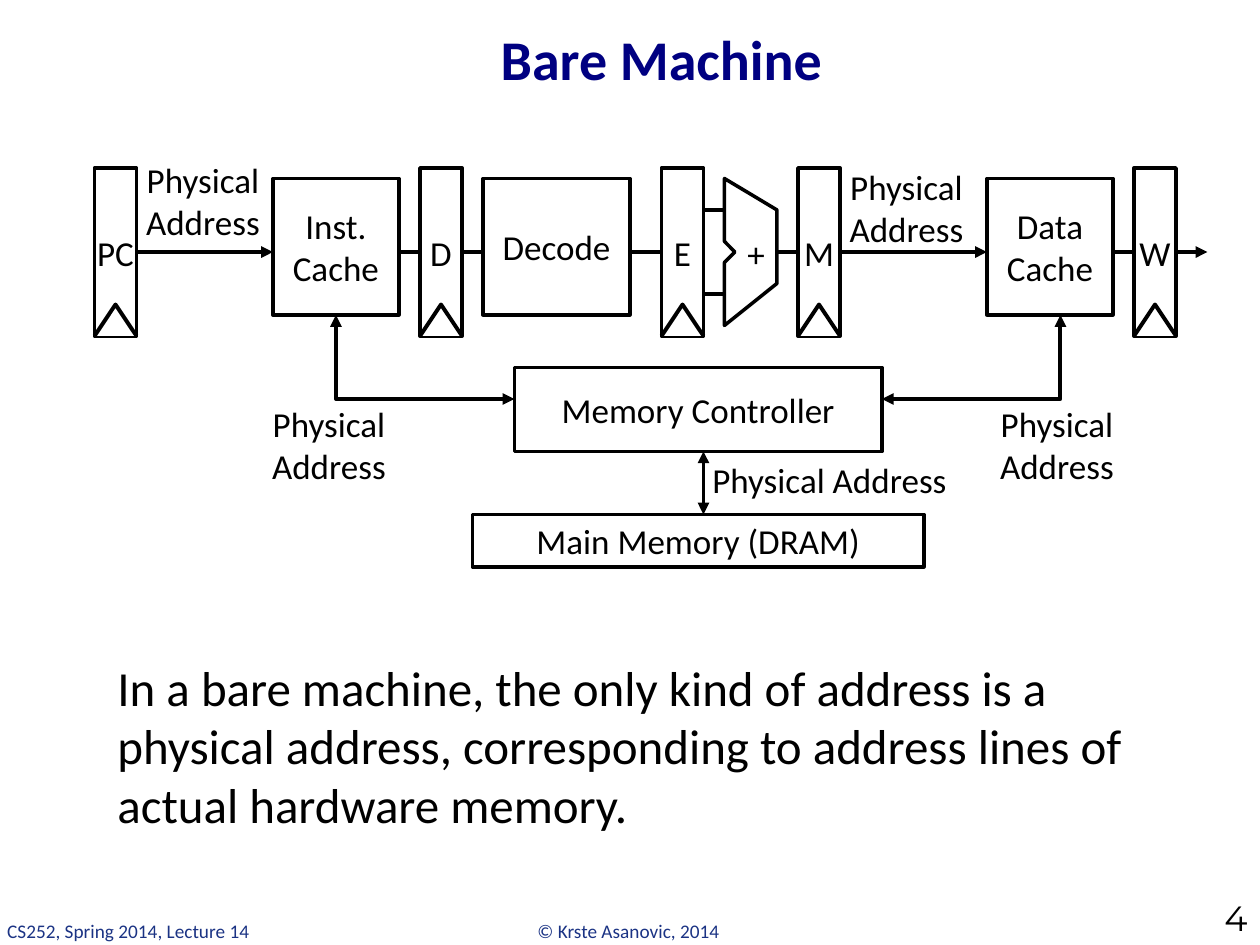
from dataclasses import dataclass
from pptx import Presentation
from pptx.dml.color import RGBColor
from pptx.enum.shapes import MSO_CONNECTOR, MSO_SHAPE
from pptx.enum.text import MSO_ANCHOR, PP_ALIGN
from pptx.oxml.ns import qn
from pptx.util import Pt
from lxml.etree import SubElement


@dataclass(frozen=True)
class Theme:
    ink: RGBColor = RGBColor(0, 0, 0)
    paper: RGBColor = RGBColor(255, 255, 255)
    navy: RGBColor = RGBColor(0x00, 0x00, 0x81)
    blue: RGBColor = RGBColor(0x1B, 0x33, 0x84)
    font: str = "Calibri"
    digit: str = "Montserrat"
    head: int = 32
    body: int = 28
    label: int = 20
    foot: int = 11
    thin: float = 2
    bold: float = 2.25


THEME = Theme()
ADDRESS = "Physical Address"
REG_W, REG_H, BUS = 24, 96, 48


def write(shape, text, size=THEME.label, color=THEME.ink, font=THEME.font,
          align=PP_ALIGN.CENTER, anchor=MSO_ANCHOR.MIDDLE, wrap=True, bold=False):
    frame = shape.text_frame
    frame.word_wrap = wrap
    frame.vertical_anchor = anchor
    line = frame.paragraphs[0]
    line.text = text
    line.alignment = align
    line.font.size = Pt(size)
    line.font.name = font
    line.font.bold = bold
    line.font.color.rgb = color


def add_text(slide, box, text, **style):
    write(slide.shapes.add_textbox(*map(Pt, box)), text, **style)


def ink(shape, width, fill=True):
    shape.shadow.inherit = False
    shape.line.color.rgb = THEME.ink
    shape.line.width = Pt(width)
    if fill:
        shape.fill.solid()
        shape.fill.fore_color.rgb = THEME.paper
    else:
        shape.fill.background()


def add_block(slide, box, text, width=THEME.thin, wrap=True):
    block = slide.shapes.add_shape(MSO_SHAPE.RECTANGLE, *map(Pt, box))
    ink(block, width)
    write(block, text, wrap=wrap)
    return block


def add_path(slide, points, width, close=False, fill=True):
    spots = [(Pt(x), Pt(y)) for x, y in points]
    maker = slide.shapes.build_freeform(*spots[0], scale=1.0)
    maker.add_line_segments(spots[1:], close=close)
    path = maker.convert_to_shape()
    ink(path, width, fill)
    return path


def add_tips(shape, *ends):
    line = shape.line._get_or_add_ln()
    for end in ends:
        SubElement(line, qn(f"a:{end}"), type="triangle")


def add_wire(slide, start, stop, *ends):
    wire = slide.shapes.add_connector(
        MSO_CONNECTOR.STRAIGHT, *map(Pt, (*start, *stop)))
    wire.line.color.rgb = THEME.ink
    wire.line.width = Pt(THEME.bold)
    add_tips(wire, *ends)
    SubElement(wire._element.spPr, qn("a:effectLst"))
    return wire


def add_latch(slide, left, top, name):
    latch = add_block(slide, (left, top, REG_W, REG_H), name, THEME.bold, False)
    base = top + REG_H
    add_path(slide, [(left, base), (left + REG_W / 2, base - 18),
                     (left + REG_W, base)], THEME.bold)
    return latch


def add_adder(slide, left, top):
    edge = [(0, 0), (0, 36), (6, 42), (0, 48), (0, 84), (30, 60), (30, 18)]
    add_path(slide, [(left + x, top + y) for x, y in edge], THEME.thin, close=True)
    add_text(slide, (left + 6, top + 27, 24, 32), "+", wrap=False)


def add_pipe(slide, left, top):
    mid = top + BUS
    first = add_latch(slide, left, top, "PC")
    stage = add_latch(slide, left + 324, top, "E")
    fetch = add_wire(slide, (left + REG_W, mid), (left + 102, mid), "tailEnd")
    fetch.begin_connect(first, 3)
    issue = add_wire(slide, (left + 174, mid), (left + 324, mid))
    issue.end_connect(stage, 1)
    for start, stop in ((390, 510), (582, 636)):
        add_wire(slide, (left + start, mid), (left + stop, mid), "tailEnd")
    for y in (24, 72):
        add_wire(slide, (left + 348, top + y), (left + 360, top + y))
    for x, name in ((186, "D"), (402, "M"), (594, "W")):
        add_latch(slide, left + x, top, name)
    for x, width, name in ((102, 72, "Inst. Cache"), (222, 84, "Decode"),
                           (510, 72, "Data Cache")):
        add_block(slide, (left + x, top + 6, width, 78), name)
    add_adder(slide, left + 360, top + 6)
    for x, y in ((18, -9), (420, -5)):
        add_text(slide, (left + x, top + y, 88, 55.5), ADDRESS)


def add_memory(slide, left, top):
    add_block(slide, (left + 126, top + 114, 258, 30), "Main Memory (DRAM)")
    add_block(slide, (left + 150, top + 30, 210, 48), "Memory Controller")
    for outer, inner in ((48, 150), (462, 360)):
        elbow = add_path(slide, [(left + outer, top), (left + outer, top + 48),
                                 (left + inner, top + 48)], THEME.bold, fill=False)
        add_tips(elbow, "headEnd", "tailEnd")
    add_wire(slide, (left + 258, top + 78), (left + 258, top + 114),
             "headEnd", "tailEnd")
    for x, y, width, height in ((0, 46, 88, 55.5), (416, 46, 88, 55.5),
                                (234, 78, 192, 32)):
        add_text(slide, (left + x, top + y, width, height), ADDRESS)


def add_title(slide, box):
    add_text(slide, box, "Bare Machine", size=THEME.head, color=THEME.navy, bold=True)


def add_note(slide, box):
    add_text(slide, box, "In a bare machine, the only kind of address is a physical "
             "address, corresponding to address lines of actual hardware memory.",
             size=THEME.body, align=PP_ALIGN.LEFT, anchor=MSO_ANCHOR.TOP)


def add_footer(slide, left, top):
    for x, width, text in ((-3, 154, "CS252, Spring 2014, Lecture 14"),
                           (300, 120, "© Krste Asanovic, 2014")):
        add_text(slide, (left + x, top + 1, width, 21), text, size=THEME.foot,
                 color=THEME.blue, align=PP_ALIGN.LEFT, anchor=MSO_ANCHOR.TOP,
                 wrap=False)
    add_text(slide, (left + 654, top, 66, 19), "4", font=THEME.digit,
             align=PP_ALIGN.RIGHT, anchor=MSO_ANCHOR.BOTTOM)


def main():
    deck = Presentation()
    deck.slide_width, deck.slide_height = Pt(720), Pt(540)
    slide = deck.slides.add_slide(deck.slide_layouts[6])
    add_title(slide, (96, 6, 564, 54))
    add_pipe(slide, 54, 96)
    add_memory(slide, 144, 180)
    add_note(slide, (60, 372, 605, 108))
    add_footer(slide, 0, 521)
    deck.save("out.pptx")


if __name__ == "__main__":
    main()
